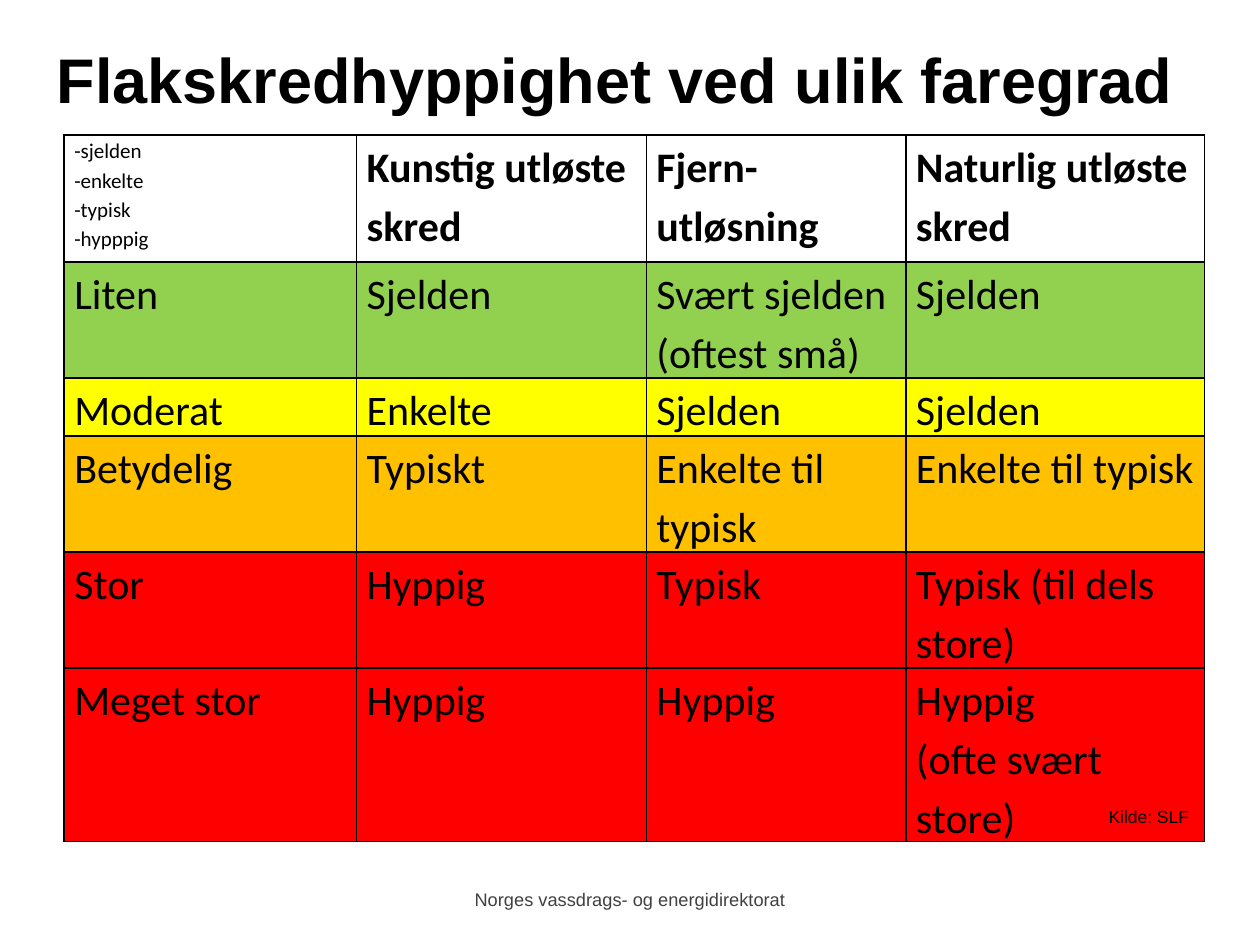
from lxml import etree
from pptx import Presentation
from pptx import util as u
from pptx.dml.color import RGBColor
from pptx.enum import text
from pptx.oxml.ns import qn

BLACK = RGBColor(0, 0, 0)
GRAY = RGBColor(0x40, 0x40, 0x40)
GREEN = RGBColor(0x92, 0xD0, 0x50)
YELLOW = RGBColor(0xFF, 0xFF, 0)
ORANGE = RGBColor(0xFF, 0xC0, 0)
RED = RGBColor(0xFF, 0, 0)

TITLE = "Flakskredhyppighet ved ulik faregrad \v"
SOURCE = "Kilde: SLF"
FOOTER = "Norges vassdrags- og energidirektorat"
SCALE = "-sjelden\n-enkelte\n-typisk\n-hypppig"

# fill, row height, cells
DANGER_ROWS = [
    (None, 1.01, [SCALE, "Kunstig utløste skred", "Fjern-\nutløsning", "Naturlig utløste skred"]),
    (GREEN, 0.83, ["Liten", "Sjelden", "Svært sjelden\n(oftest små)", "Sjelden"]),
    (YELLOW, 0.41, ["Moderat", "Enkelte", "Sjelden", "Sjelden"]),
    (ORANGE, 0.83, ["Betydelig", "Typiskt", "Enkelte til typisk", "Enkelte til typisk"]),
    (RED, 0.83, ["Stor", "Hyppig", "Typisk", "Typisk (til dels store)"]),
    (RED, 0.83, ["Meget stor", "Hyppig", "Hyppig", "Hyppig\n(ofte svært store)"]),
]
COLUMN_WIDTHS = [2.32, 2.3, 2.06, 2.37]


def write(frame, content, size, font="Arial", color=BLACK, bold=False,
          align=None, spacing=None, after=None, baseline=None):
    frame.word_wrap = True
    for i, line in enumerate(content.split("\n")):
        paragraph = frame.paragraphs[0] if i == 0 else frame.add_paragraph()
        paragraph.text = line
        paragraph.alignment = align
        paragraph.line_spacing = spacing
        paragraph.space_after = after
        paragraph.font.size = u.Pt(size)
        for run in paragraph.runs:
            run.font.size = u.Pt(size)
            run.font.name = font
            run.font.bold = bold
            run.font.color.rgb = color
            if baseline:
                run.font._element.set("baseline", str(baseline * 1000))


def add_borders(cell, color=BLACK, width=1):
    properties = cell._tc.get_or_add_tcPr()
    for side in ("lnL", "lnR", "lnT", "lnB"):
        line = etree.SubElement(properties, qn(f"a:{side}"), w=str(u.Pt(width)))
        fill = etree.SubElement(line, qn("a:solidFill"))
        etree.SubElement(fill, qn("a:srgbClr"), val=str(color))


def add_label(slide, box, content, size, **style):
    label = slide.shapes.add_textbox(*map(u.Inches, box))
    write(label.text_frame, content, size, **style)


def add_danger_table(slide, left, top):
    heights = [height for _, height, _ in DANGER_ROWS]
    table = slide.shapes.add_table(
        len(heights), len(COLUMN_WIDTHS), u.Inches(left), u.Inches(top),
        u.Inches(sum(COLUMN_WIDTHS)), u.Inches(sum(heights))).table
    table.first_row = table.horz_banding = False
    for column, width in zip(table.columns, COLUMN_WIDTHS):
        column.width = u.Inches(width)
    for r, (color, height, contents) in enumerate(DANGER_ROWS):
        table.rows[r].height = u.Inches(height)
        for c, content in enumerate(contents):
            cell = table.cell(r, c)
            cell.margin_left = cell.margin_right = u.Inches(0.08)
            cell.margin_top = cell.margin_bottom = 0
            add_borders(cell)
            if color is None:
                cell.fill.background()
            else:
                cell.fill.solid()
                cell.fill.fore_color.rgb = color
            write(cell.text_frame, content, 12 if content == SCALE else 24,
                  font="Calibri", bold=r == 0 and c > 0, spacing=1.15)


def main():
    deck = Presentation()
    deck.slide_width, deck.slide_height = u.Inches(10), u.Inches(7.5)
    slide = deck.slides.add_slide(deck.slide_layouts[5])

    add_label(slide, (2.5, 6.97, 5, 0.3), FOOTER, 18, color=GRAY,
              align=text.PP_ALIGN.CENTER, after=u.Pt(6), baseline=30)

    title = slide.shapes.title
    title.left, title.top, title.width, title.height = map(u.Inches, (0.35, 0.3, 9.29, 1.25))
    title.text_frame.vertical_anchor = text.MSO_ANCHOR.MIDDLE
    title.text_frame.auto_size = text.MSO_AUTO_SIZE.NONE
    write(title.text_frame, TITLE, 36, bold=True, align=text.PP_ALIGN.LEFT)

    add_danger_table(slide, 0.51, 1.07)
    add_label(slide, (8.7, 6.35, 1.1, 0.27), SOURCE, 10)
    deck.save("out.pptx")


if __name__ == "__main__":
    main()
